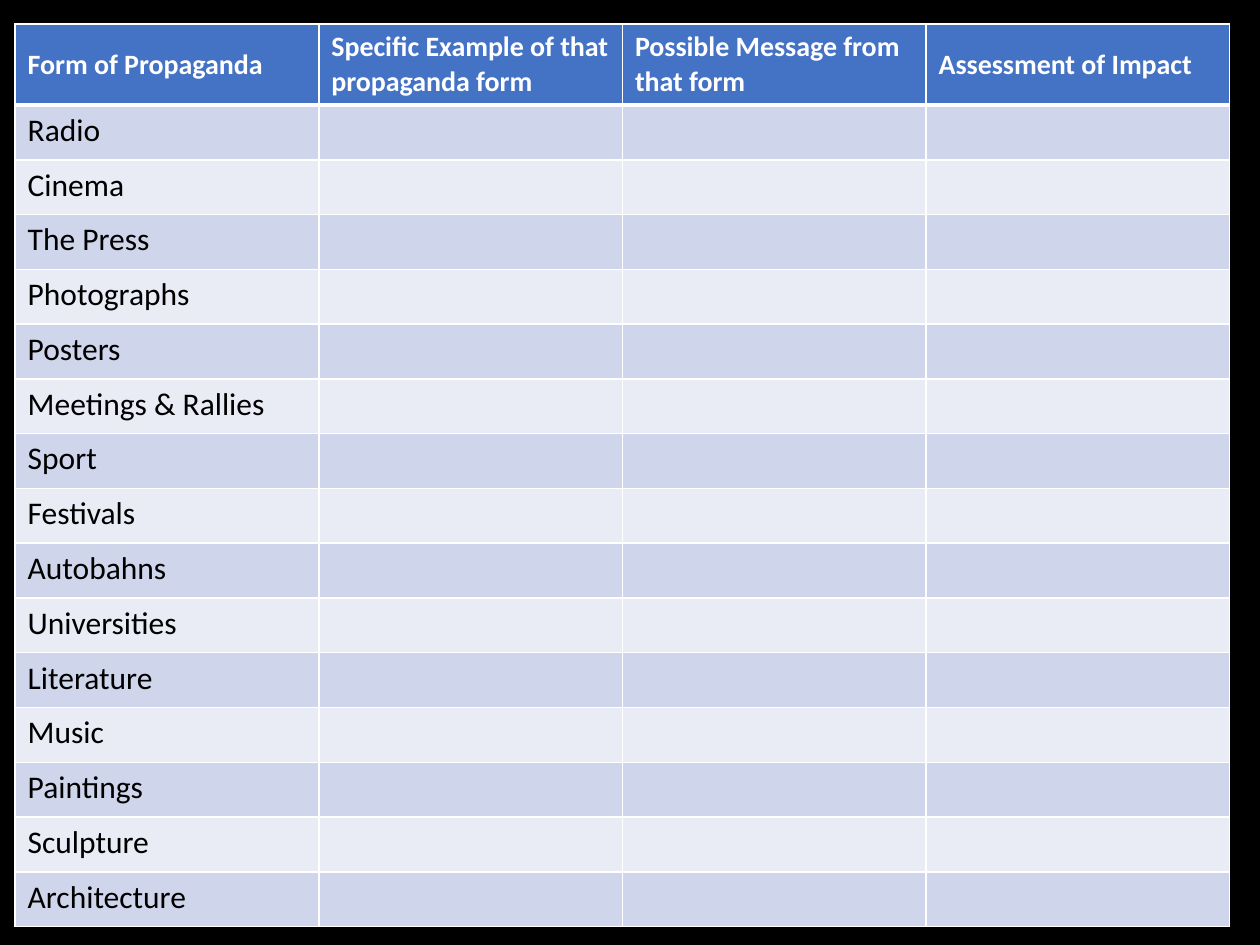
"""Build a worksheet slide for assessing forms of propaganda."""
from lxml import etree
from pptx import Presentation
from pptx.dml.color import RGBColor
from pptx.enum.text import MSO_ANCHOR
from pptx.oxml.ns import qn
from pptx.util import Inches, Pt

MIDDLE, TOP = MSO_ANCHOR.MIDDLE, MSO_ANCHOR.TOP
BLANK_LAYOUT = 6
HEADINGS = [
    "Form of Propaganda",
    "Specific Example of that propaganda form",
    "Possible Message from that form",
    "Assessment of Impact",
]
FORMS = [
    "Radio", "Cinema", "The Press", "Photographs", "Posters",
    "Meetings & Rallies", "Sport", "Festivals", "Autobahns", "Universities",
    "Literature", "Music", "Paintings", "Sculpture", "Architecture",
]


def color(value):
    return RGBColor.from_string(value)


def write(frame, text, size=18, ink="000000", bold=False, font="Calibri"):
    paragraph = frame.paragraphs[0]
    paragraph.font.size = Pt(size)
    span = paragraph.add_run()
    span.text = text
    span.font.name = font
    span.font.size = Pt(size)
    span.font.bold = bold
    span.font.color.rgb = color(ink)


class Worksheet:
    header_fill = "4472C4"
    band_fills = ("E9EBF5", "CFD5EA")
    line = "FFFFFF"

    def __init__(self, page):
        self.page = page

    def background(self, value):
        fill = self.page.background.fill
        fill.solid()
        fill.fore_color.rgb = color(value)

    def borders(self, cell, **widths):
        properties = cell._tc.get_or_add_tcPr()
        for side in "LRTB":
            width = widths.get(side, 1)
            edge = etree.SubElement(properties, qn(f"a:ln{side}"), w=str(Pt(width)))
            fill = etree.SubElement(edge, qn("a:solidFill"))
            etree.SubElement(fill, qn("a:srgbClr"), val=self.line)

    def cell(self, cell, fill, anchor=TOP, **widths):
        self.borders(cell, **widths)
        cell.fill.solid()
        cell.fill.fore_color.rgb = color(fill)
        cell.vertical_anchor = anchor

    def table(self, headings, labels, left, top, width, height, header_height):
        table = self.page.shapes.add_table(
            len(labels) + 1, len(headings), left, top, width, height
        ).table
        for column in table.columns:
            column.width = width // len(headings)
        for row in table.rows:
            row.height = (height - header_height) // len(labels)
        table.rows[0].height = header_height
        for cell, heading in zip(table.rows[0].cells, headings):
            self.cell(cell, self.header_fill, MIDDLE, B=3)
            write(cell.text_frame, heading, size=16, ink="FFFFFF", bold=True)
        for index, label in enumerate(labels, start=1):
            for cell in table.rows[index].cells:
                self.cell(cell, self.band_fills[index % 2], T=3 if index == 1 else 1)
            write(table.cell(index, 0).text_frame, label)


def main():
    deck = Presentation()
    deck.slide_width, deck.slide_height = Inches(10), Inches(7.5)
    sheet = Worksheet(deck.slides.add_slide(deck.slide_layouts[BLANK_LAYOUT]))
    sheet.background("000000")
    sheet.table(HEADINGS, FORMS, Inches(0.12), Inches(0.19),
                Inches(9.64), Inches(7.15), Inches(0.63))
    deck.save("out.pptx")


if __name__ == "__main__":
    main()
